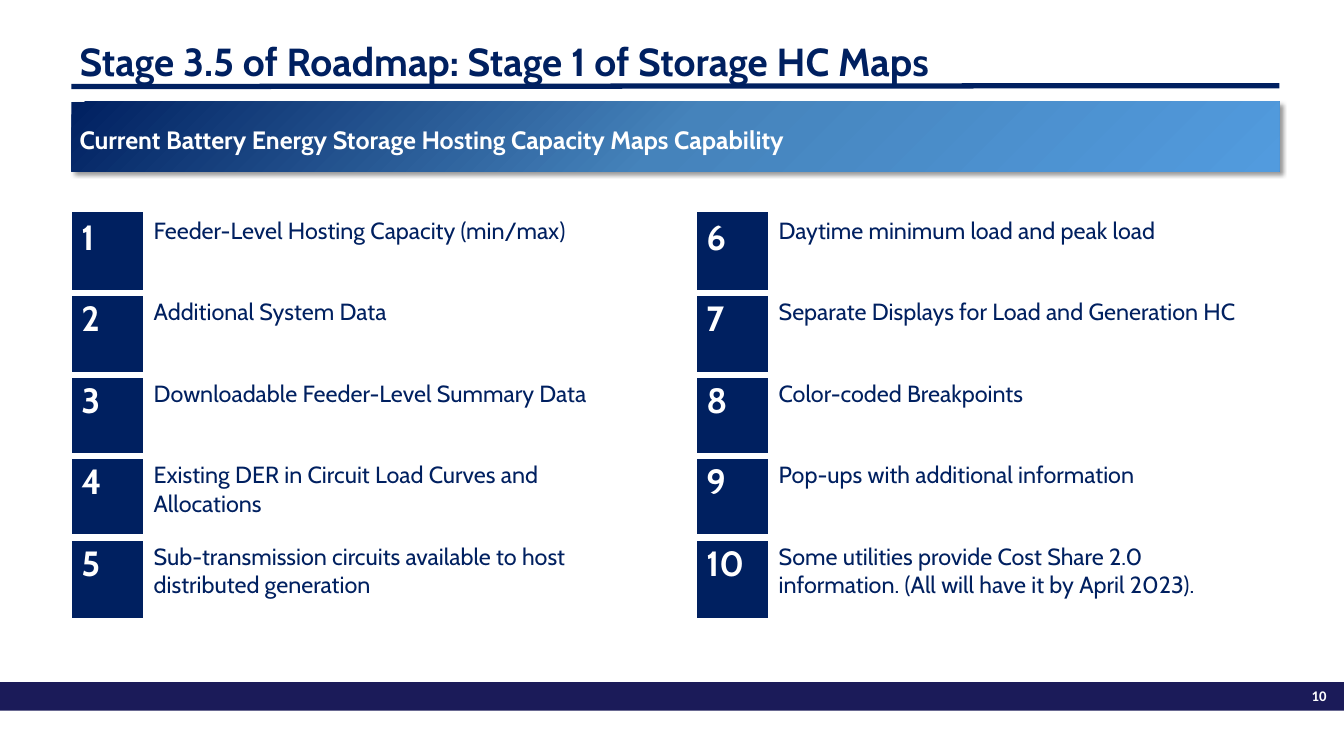
from dataclasses import dataclass, field

from pptx import Presentation
from pptx import util as u
from pptx.dml.color import RGBColor
from pptx.enum import shapes, text
from pptx.oxml import parse_xml
from pptx.oxml.ns import nsdecls, qn

# The slide is laid out on a grid of 160 columns by 90 rows
COLUMNS, ROWS = 160, 90
presentation = Presentation()
presentation.slide_width, presentation.slide_height = u.Inches(16), u.Inches(9)


@dataclass(frozen=True)
class Theme:
    navy: str = "002060"
    footer: str = "1B1B59"
    white: str = "FFFFFF"
    shadow: str = "000000"
    gradient: tuple = ((0, "002060"), (50, "4583BB"), (100, "529BDE"))
    font: str = "Cabin"
    number_font: str = "Calibri"
    title_size: float = 33.5
    banner_size: float = 21.5
    index_size: float = 30
    item_size: float = 20
    page_size: float = 12.6
    rule_width: float = 4.5
    gap_width: float = 6


THEME = Theme()


@dataclass(frozen=True)
class Box:
    """An area in grid columns and rows."""
    left: float
    top: float
    width: float
    height: float

    def lengths(self) -> tuple:
        return (across(self.left), down(self.top),
                across(self.width), down(self.height))


@dataclass(frozen=True)
class Label:
    """A text with its type and paragraph format."""
    words: str
    size: float
    colour: str
    bold: bool = True
    font: str = THEME.font
    paragraph: dict = field(default_factory=dict)
    frame: dict = field(default_factory=dict)


@dataclass(frozen=True)
class CapabilityList:
    left: float
    first: int
    items: tuple


def across(columns: float) -> int:
    return round(presentation.slide_width * columns / COLUMNS)


def down(rows: float) -> int:
    return round(presentation.slide_height * rows / ROWS)


def apply(target, values: dict) -> None:
    for name, value in values.items():
        setattr(target, name, value)


def write(frame, label: Label) -> None:
    apply(frame, {"word_wrap": True, **label.frame})
    paragraph = frame.paragraphs[0]
    apply(paragraph, label.paragraph)
    run = paragraph.add_run()
    run.text = label.words
    apply(run.font, {"name": label.font, "size": u.Pt(label.size), "bold": label.bold})
    run.font.color.rgb = RGBColor.from_string(label.colour)


def add_label(slide, box: Box, label: Label) -> None:
    write(slide.shapes.add_textbox(*box.lengths()).text_frame, label)


def add_bar(slide, box: Box, colour: str):
    shape = slide.shapes.add_shape(shapes.MSO_SHAPE.RECTANGLE, *box.lengths())
    shape.shadow.inherit = False
    shape.fill.solid()
    shape.fill.fore_color.rgb = RGBColor.from_string(colour)
    shape.line.fill.background()
    return shape


def add_banner(slide, box: Box, label: Label) -> None:
    shape = add_bar(slide, box, THEME.navy)
    stops = "".join(f'<a:gs pos="{share * 1000}"><a:srgbClr val="{colour}"/></a:gs>'
                    for share, colour in THEME.gradient)
    properties = shape._element.spPr
    properties.replace(properties.find(qn("a:solidFill")), parse_xml(
        f'<a:gradFill {nsdecls("a")} rotWithShape="1"><a:gsLst>{stops}</a:gsLst>'
        '<a:lin ang="2700000" scaled="0"/></a:gradFill>'))
    properties.find(qn("a:effectLst")).append(parse_xml(
        f'<a:outerShdw {nsdecls("a")} blurRad="{u.Pt(4)}" dist="{u.Pt(3)}" '
        f'dir="2700000" algn="tl" rotWithShape="0"><a:srgbClr val="{THEME.shadow}">'
        '<a:alpha val="40000"/></a:srgbClr></a:outerShdw>'))
    write(shape.text_frame, label)


def add_rule(slide, left: float, right: float, start: float, end: float) -> None:
    rule = slide.shapes.add_connector(
        shapes.MSO_CONNECTOR.STRAIGHT, across(left), down(start), across(right), down(end))
    rule.line.color.rgb = RGBColor.from_string(THEME.navy)
    rule.line.width = u.Pt(THEME.rule_width)
    rule._element.spPr.append(parse_xml(f'<a:effectLst {nsdecls("a")}/>'))


def add_gap(cell, sides: list) -> None:
    for position, side in enumerate(sides):
        cell._tc.get_or_add_tcPr().insert(position, parse_xml(
            f'<a:{side} {nsdecls("a")} w="{u.Pt(THEME.gap_width)}"><a:solidFill>'
            f'<a:srgbClr val="{THEME.white}"/></a:solidFill></a:{side}>'))


def add_capabilities(slide, group: CapabilityList) -> None:
    count = len(group.items)
    widths = (8.6, 60)
    box = Box(group.left, 25.2, sum(widths), 9.7 * count)
    table = slide.shapes.add_table(count, len(widths), *box.lengths()).table
    apply(table, {"first_row": False, "horz_banding": False})
    for column, width in zip(table.columns, widths):
        column.width = across(width)
    margins = {"margin_left": u.Inches(0.12), "margin_right": u.Inches(0.12),
               "margin_top": u.Inches(0.06), "margin_bottom": u.Inches(0.06)}
    for row, item in enumerate(group.items):
        sides = ["lnT"] * (row > 0) + ["lnB"] * (row < count - 1)
        labels = (Label(str(group.first + row), THEME.index_size, THEME.white),
                  Label(item, THEME.item_size, THEME.navy, bold=False))
        for column, (label, fill) in enumerate(zip(labels, (THEME.navy, THEME.white))):
            cell = table.cell(row, column)
            apply(cell, margins)
            cell.fill.solid()
            cell.fill.fore_color.rgb = RGBColor.from_string(fill)
            add_gap(cell, sides)
            write(cell.text_frame, label)


CAPABILITIES = (
    CapabilityList(8.5, 1, (
        "Feeder-Level Hosting Capacity (min/max)",
        "Additional System Data",
        "Downloadable Feeder-Level Summary Data",
        "Existing DER in Circuit Load Curves and Allocations",
        "Sub-transmission circuits available to host distributed generation")),
    CapabilityList(82.9, 6, (
        "Daytime minimum load and peak load",
        "Separate Displays for Load and Generation HC",
        "Color-coded Breakpoints",
        "Pop-ups with additional information",
        "Some utilities provide Cost Share 2.0 information. "
        "(All will have it by April 2023).")),
)


def main() -> None:
    slide = presentation.slides.add_slide(presentation.slide_layouts[6])

    # Footer with page number
    add_bar(slide, Box(0, 81.2, COLUMNS, 3.4), THEME.footer)
    add_label(slide, Box(152.3, 81.3, 6.6, 3.1), Label(
        "10", THEME.page_size, THEME.white, font=THEME.number_font,
        paragraph={"alignment": text.PP_ALIGN.RIGHT}))

    # Title and its rule
    add_rule(slide, 8.5, 152.3, 10.3, 10.2)
    add_label(slide, Box(8.5, 4.8, 143.8, 5.7), Label(
        "Stage 3.5 of Roadmap: Stage 1 of Storage HC Maps", THEME.title_size, THEME.navy,
        paragraph={"line_spacing": 0.9},
        frame={"vertical_anchor": text.MSO_ANCHOR.MIDDLE}))

    # Banner
    add_banner(slide, Box(8.5, 12.1, 143.8, 8.3), Label(
        "Current Battery Energy Storage Hosting Capacity Maps Capability",
        THEME.banner_size, THEME.white,
        paragraph={"line_spacing": 1.1, "alignment": text.PP_ALIGN.LEFT},
        frame={"vertical_anchor": text.MSO_ANCHOR.TOP, "margin_top": down(2.4)}))

    # Numbered capabilities
    for group in CAPABILITIES:
        add_capabilities(slide, group)

    presentation.save("out.pptx")


if __name__ == "__main__":
    main()
